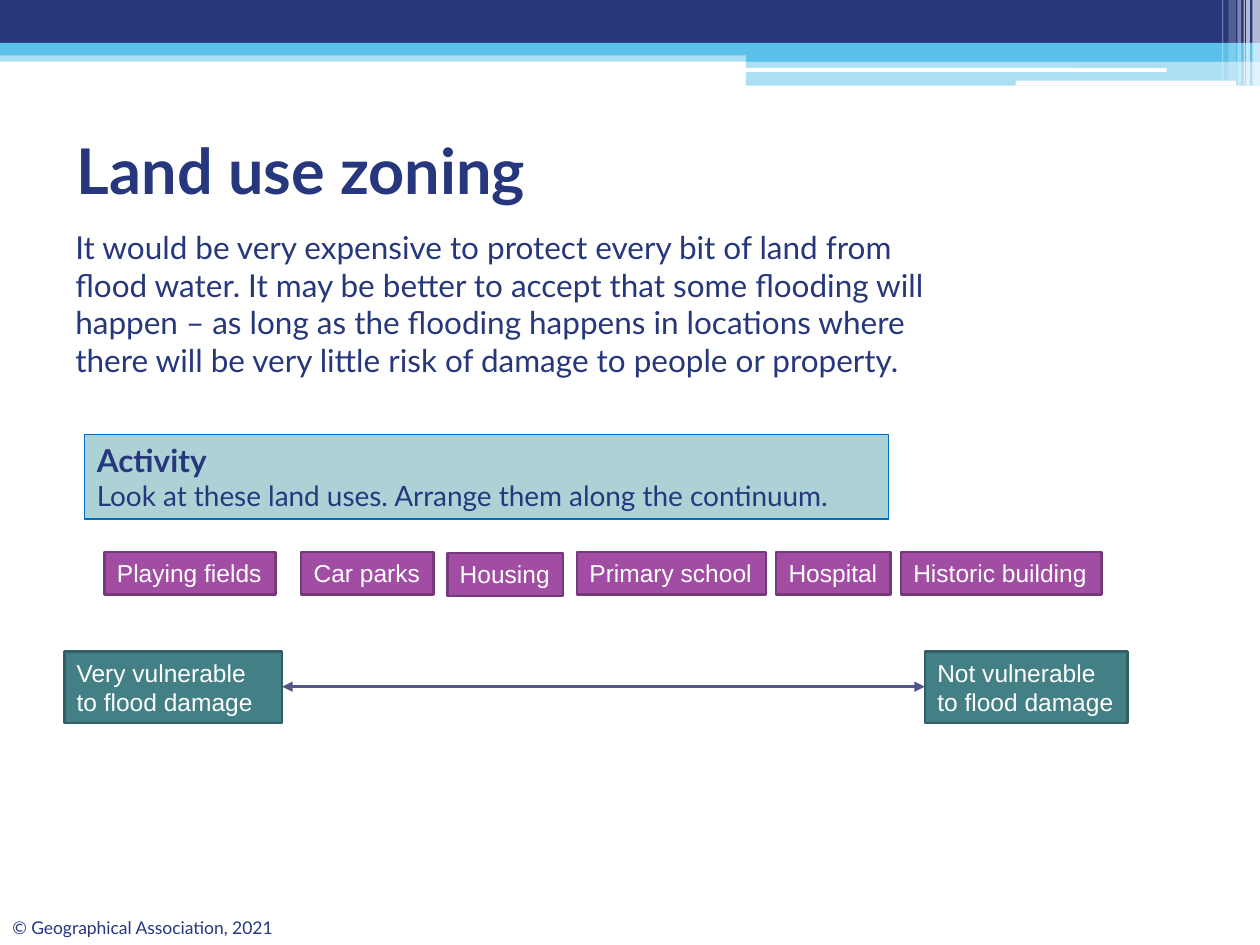
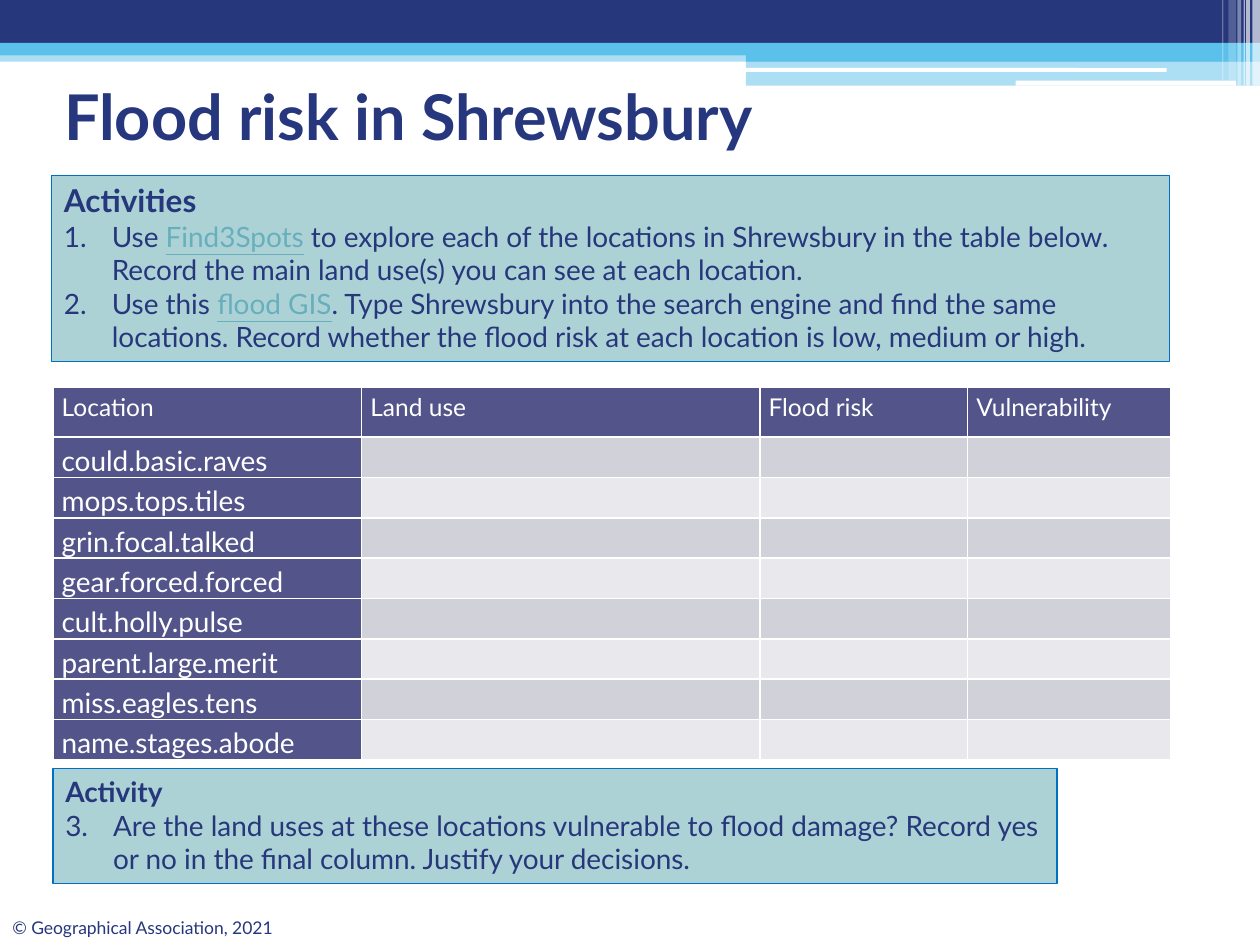
from lxml.etree import SubElement
from pptx import Presentation
from pptx.dml.color import RGBColor
from pptx.enum.shapes import MSO_CONNECTOR, MSO_SHAPE as Preset
from pptx.enum.text import MSO_ANCHOR as Anchor, MSO_AUTO_SIZE as Fit, PP_ALIGN as Align
from pptx.oxml.ns import qn
from pptx.util import Inches, Pt


class Theme:
    navy, title_navy = "26377C", "26377D"
    sky, white = "5CC1EA", "FFFFFF"
    panel, panel_edge = "ADD2D6", "0070C0"
    purple, purple_edge = "A04DA3", "763979"
    teal, teal_edge = "438086", "325F63"
    indigo, row_dark, row_light = "53548A", "D1D1DA", "E9E9ED"
    link = "67AFBD"
    font, label_font = "Lato", "Arial"
    title, lead, text, label, footer = 36, 18, 16, 14, 10


def add_box(page, at, fill, edge=None, width=0.75, preset=Preset.RECTANGLE, opacity=100):
    shape = page.shapes.add_shape(preset, *map(Inches, at))
    shape.shadow.inherit = False
    shape.fill.solid()
    shape.fill.fore_color.rgb = RGBColor.from_string(fill)
    if opacity < 100:
        color = shape.element.xpath("./p:spPr/a:solidFill/a:srgbClr")[0]
        SubElement(color, qn("a:alpha"), val=str(opacity * 1000))
    if edge:
        shape.line.color.rgb = RGBColor.from_string(edge)
        shape.line.width = Pt(width)
    else:
        shape.line.fill.background()
    return shape


def write(frame, lines, color=Theme.navy, font=Theme.font, anchor=Anchor.TOP, fit=Fit.NONE, wrap=True):
    """Each line is (spans, size, bold, number); every second span is a link."""
    frame.word_wrap, frame.auto_size, frame.vertical_anchor = wrap, fit, anchor
    for index, (spans, size, bold, number) in enumerate(lines):
        para = frame.add_paragraph() if index else frame.paragraphs[0]
        para.alignment = Align.LEFT
        if number:
            props = para._p.get_or_add_pPr()
            props.set("marL", str(Inches(0.38)))
            props.set("indent", str(-Inches(0.38)))
            SubElement(props, qn("a:buAutoNum"), type="arabicPeriod", startAt=str(number))
        para.font.name, para.font.size, para.font.bold = font, Pt(size), bold
        para.font.color.rgb = RGBColor.from_string(color)
        for position, words in enumerate(spans):
            span = para.add_run()
            span.text = words
            if position % 2:
                span.font.underline = True
                span.font.color.rgb = RGBColor.from_string(Theme.link)


deck = Presentation()
deck.slide_width, deck.slide_height = Inches(10), Inches(7.5)
layout = deck.slide_layouts[5]

# Pages and titles
pages = []
for heading, at in [
    ("Land use zoning", (0.51, 0.76, 9, 1.17)),
    ("Flood risk in Shrewsbury", (0.41, 0.52, 8.87, 0.79)),
]:
    page = deck.slides.add_slide(layout)
    title = page.shapes.title
    title.left, title.top, title.width, title.height = map(Inches, at)
    write(title.text_frame, [([heading], Theme.title, True, None)], Theme.title_navy, anchor=Anchor.MIDDLE)
    pages.append(page)
zoning, risk = pages

# Bands, corner stripes and footer, shared through the layout
shared = []
for at, color, opacity in [
    ((0, 0.4, 10, 0.09), Theme.sky, 50),
    ((0, 0, 10, 0.34), Theme.navy, 100),
    ((0, 0.34, 10, 0.1), Theme.sky, 100),
    ((5.92, 0.39, 4.08, 0.1), Theme.sky, 100),
    ((5.92, 0.48, 4.08, 0.2), Theme.sky, 50),
]:
    shared.append(add_box(zoning, at, color, opacity=opacity))
for at in [(5.91, 0.54, 3.35, 0.03), (8.06, 0.64, 1.75, 0.04)]:
    shared.append(add_box(zoning, at, Theme.white, preset=Preset.ROUNDED_RECTANGLE))
for left, width, height, opacity in [
    (9.94, 0.06, 0.68, 65), (9.89, 0.03, 0.68, 65), (9.87, 0.01, 0.68, 60),
    (9.82, 0.03, 0.68, 40), (9.75, 0.06, 0.64, 20), (9.7, 0.01, 0.64, 30),
]:
    shared.append(add_box(zoning, (left, 0, width, height), Theme.white, opacity=opacity))
footer = zoning.shapes.add_textbox(*map(Inches, (0, 7.23, 2.87, 0.27)))
write(footer.text_frame, [(["© Geographical Association, 2021"], Theme.footer, False, None)])
shared.append(footer)
for number, shape in enumerate(shared, 100):
    shape.element.xpath(".//p:cNvPr")[0].set("id", str(number))
    layout.shapes.element.append(shape.element)

# Zoning: introduction
intro = zoning.shapes.add_textbox(*map(Inches, (0.5, 1.76, 7.1, 1.6)))
write(intro.text_frame, [([
    "It would be very expensive to protect every bit of land from flood water. "
    "It may be better to accept that some flooding will happen – as long as the flooding "
    "happens in locations where there will be very little risk of damage to people or property."
], Theme.lead, False, None)])

# Activity panels on both pages
for page, at, lines in [
    (zoning, (0.67, 3.45, 6.38, 0.67), [
        (["Activity"], Theme.lead, True, None),
        (["Look at these land uses. Arrange them along the continuum."], Theme.text, False, None),
    ]),
    (risk, (0.41, 1.39, 8.87, 1.48), [
        (["Activities"], Theme.lead, True, None),
        (["Use ", "Find3Spots", " to explore each of the locations in Shrewsbury in the table below. "
          "Record the main land use(s) you can see at each location."], Theme.text, False, 1),
        (["Use this ", "flood GIS", ". Type Shrewsbury into the search engine and find the same locations. "
          "Record whether the flood risk at each location is low, medium or high."], Theme.text, False, 2),
    ]),
    (risk, (0.42, 6.1, 7.97, 0.91), [
        (["Activity"], Theme.text, True, None),
        (["Are the land uses at these locations vulnerable to flood damage? "
          "Record yes or no in the final column. Justify your decisions."], Theme.text, False, 3),
    ]),
]:
    panel = add_box(page, at, Theme.panel, Theme.panel_edge)
    write(panel.text_frame, lines, fit=Fit.SHAPE_TO_FIT_TEXT)

# Zoning: continuum arrow
arrow = zoning.shapes.add_connector(MSO_CONNECTOR.STRAIGHT, *map(Inches, (2.24, 5.45, 7.34, 5.45)))
arrow.line.color.rgb = RGBColor.from_string(Theme.indigo)
arrow.line.width = Pt(1.75)
for end in ("a:headEnd", "a:tailEnd"):
    SubElement(arrow.line._get_or_add_ln(), qn(end), type="triangle")
SubElement(arrow.element.spPr, qn("a:effectLst"))

# Zoning: ends of the continuum and land use cards
ends = [("Very vulnerable to flood damage", 0.51, 1.73), ("Not vulnerable to flood damage", 7.34, 1.61)]
land_uses = [
    ("Playing fields", 0.83, 1.36), ("Car parks", 2.39, 1.05), ("Housing", 3.55, 0.92),
    ("Primary school", 4.58, 1.5), ("Hospital", 6.16, 0.91), ("Historic building", 7.15, 1.59),
]
for cards, top, height, fill, edge, wrap in [
    (ends, 5.17, 0.57, Theme.teal, Theme.teal_edge, True),
    (land_uses, 4.38, 0.34, Theme.purple, Theme.purple_edge, False),
]:
    for words, left, width in cards:
        offset = 0.01 if words == "Housing" else 0
        card = add_box(zoning, (left, top + offset, width, height), fill, edge, 1.5)
        write(card.text_frame, [([words], Theme.label, False, None)], Theme.white, Theme.label_font,
              fit=Fit.SHAPE_TO_FIT_TEXT, wrap=wrap)

# Risk: location table
headings = ["Location", "Land use", "Flood risk", "Vulnerability"]
locations = [
    "could.basic.raves", "mops.tops.tiles", "grin.focal.talked", "gear.forced.forced",
    "cult.holly.pulse", "parent.large.merit", "miss.eagles.tens", "name.stages.abode",
]
rows = [headings] + [[place, "", "", ""] for place in locations]
table = risk.shapes.add_table(len(rows), len(headings), *map(Inches, (0.42, 3.07, 8.87, 2.88))).table
for column, width in zip(table.columns, (2.45, 3.16, 1.65, 1.61)):
    column.width = Inches(width)
for r, row in enumerate(rows):
    table.rows[r].height = Inches(0.32 if r else 0.4)
    for c, words in enumerate(row):
        cell = table.cell(r, c)
        cell.margin_left = cell.margin_right = Inches(0.07)
        cell.margin_top = cell.margin_bottom = 0
        for side in ("a:lnL", "a:lnR", "a:lnT", "a:lnB"):
            border = SubElement(cell._tc.get_or_add_tcPr(), qn(side), w=str(Pt(1)))
            SubElement(SubElement(border, qn("a:solidFill")), qn("a:srgbClr"), val=Theme.white)
        band = Theme.row_dark if r % 2 else Theme.row_light
        cell.fill.solid()
        cell.fill.fore_color.rgb = RGBColor.from_string(Theme.indigo if r == 0 or c == 0 else band)
        para = cell.text_frame.paragraphs[0]
        if words:
            para.text = words
            para.line_spacing = 1.2
        para.font.name, para.font.bold = Theme.font, False
        para.font.size = Pt(Theme.text if r else Theme.label)
        para.font.color.rgb = RGBColor.from_string(Theme.white)

deck.save("out.pptx")
